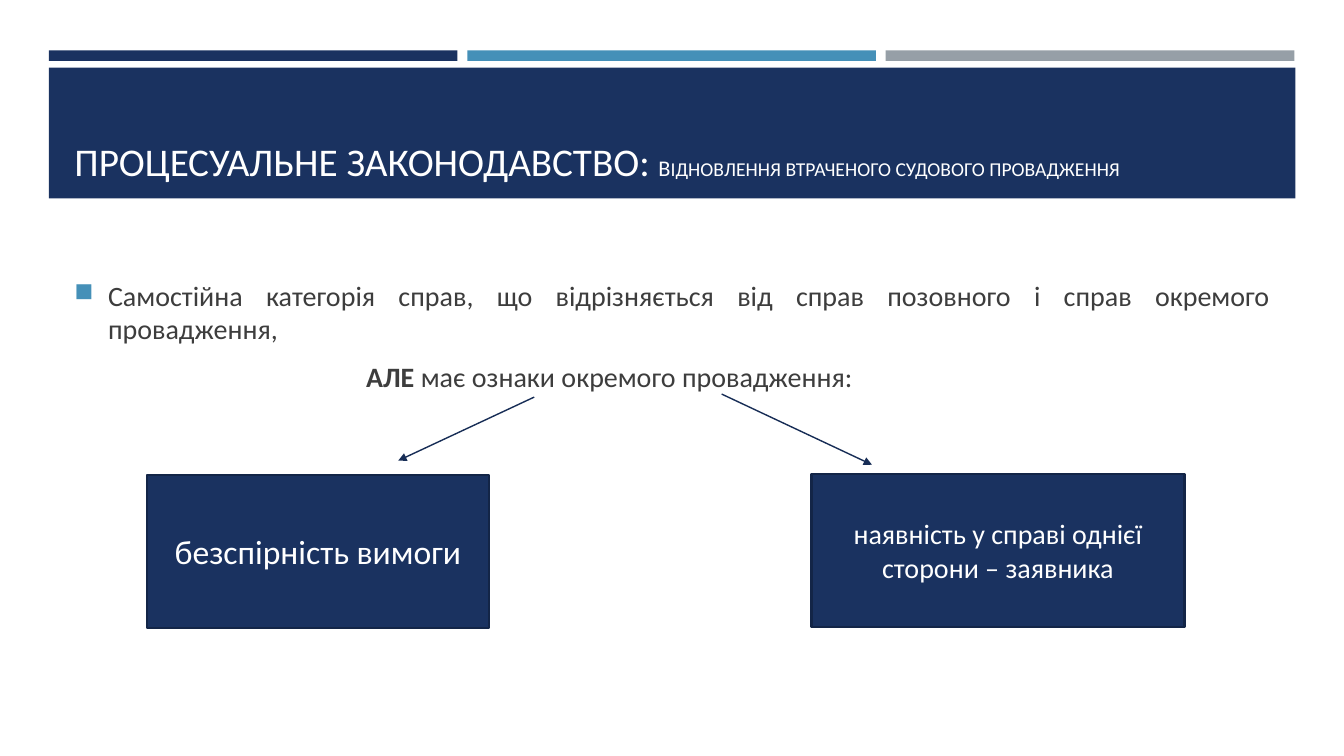
from dataclasses import dataclass

from lxml.etree import SubElement
from pptx import Presentation
from pptx.dml.color import RGBColor
from pptx.enum.shapes import MSO_CONNECTOR as Connector, MSO_SHAPE as Preset
from pptx.enum.text import MSO_ANCHOR as Anchor, PP_ALIGN as Align
from pptx.oxml.ns import qn
from pptx.util import Inches, Pt

WIDTH, HEIGHT = Inches(13.33), Inches(7.5)
NAVY, BLUE, GREY = "1A3260", "4590B8", "969FA7"
EDGE, ARROW, INK, WHITE = "132547", "172D56", "3D3D3D", "FFFFFF"
FONT = "Calibri"


@dataclass(frozen=True)
class Area:
    """A rectangle in percent of the slide's width and height."""
    left: float
    top: float
    width: float
    height: float

    def lengths(self) -> tuple:
        return (*point(self.left, self.top), *point(self.width, self.height))


@dataclass(frozen=True)
class Piece:
    text: str
    size: int
    color: str = WHITE
    bold: bool = False


@dataclass(frozen=True)
class Feature:
    """A boxed feature and the arrow that leads to it."""
    area: Area
    label: Piece
    arrow_start: tuple
    arrow_end: tuple


STRIPES = (NAVY, BLUE, GREY)
STRIPE_LEFT, STRIPE_STEP = 3.64, 31.13
BAND = Area(STRIPE_LEFT, 8.93, 92.74, 17.33)
TITLE = Area(4.8, 10.27, 90.45, 14.8)
BODY = Area(4.8, 36.13, 90.45, 18)

TITLE_PIECES = (
    Piece("ПРОЦЕСУАЛЬНЕ ЗАКОНОДАВСТВО: ", 28),
    Piece("В", 16),
    Piece("ІДНОВЛЕННЯ ВТРАЧЕНОГО СУДОВОГО ПРОВАДЖЕННЯ", 14),
)
CATEGORY = (Piece("Самостійна категорія справ, що відрізняється від справ "
                  "позовного і справ окремого провадження,", 20, INK),)
EXCEPTION = (Piece("АЛЕ ", 20, INK, True),
             Piece("має ознаки окремого провадження:", 20, INK))
FEATURES = (
    Feature(Area(10.95, 62.8, 25.43, 20.27), Piece("безспірність вимоги", 24),
            (39.75, 52.53), (29.63, 60.93)),
    Feature(Area(60.38, 62.67, 27.75, 20.27),
            Piece("наявність у справі однієї сторони – заявника", 20),
            (53.7, 52.13), (64.88, 61.47)),
)


def point(x: float, y: float) -> tuple:
    return round(WIDTH * x / 100), round(HEIGHT * y / 100)


def rgb(value: str) -> RGBColor:
    return RGBColor.from_string(value)


def set_all(target, formats: dict) -> None:
    for name, value in formats.items():
        setattr(target, name, value)


def write(paragraph, pieces: tuple, **formats) -> None:
    set_all(paragraph, formats)
    for piece in pieces:
        run = paragraph.add_run()
        run.text = piece.text
        set_all(run.font, {"name": FONT, "size": Pt(piece.size), "bold": piece.bold})
        run.font.color.rgb = rgb(piece.color)


def add_block(slide, area: Area, fill: str, edge: str = ""):
    block = slide.shapes.add_shape(Preset.RECTANGLE, *area.lengths())
    block.shadow.inherit = False
    block.fill.solid()
    block.fill.fore_color.rgb = rgb(fill)
    if edge:
        block.line.color.rgb = rgb(edge)
        block.line.width = Pt(1.75)
    else:
        block.line.fill.background()
    return block


def add_text_frame(slide, area: Area, anchor: Anchor):
    frame = slide.shapes.add_textbox(*area.lengths()).text_frame
    set_all(frame, {"word_wrap": True, "vertical_anchor": anchor})
    return frame


def add_bullet(paragraph, color: str) -> None:
    properties = paragraph._p.get_or_add_pPr()
    bullet_color = SubElement(properties, qn("a:buClr"))
    SubElement(bullet_color, qn("a:srgbClr"), val=color)
    SubElement(properties, qn("a:buSzPct"), val="92000")
    SubElement(properties, qn("a:buChar"), char="■")


def indent(paragraph, left: float, first: float = 0) -> None:
    """Indent by shares of the slide's width, in percent."""
    properties = paragraph._p.get_or_add_pPr()
    properties.set("marL", str(point(left, 0)[0]))
    properties.set("indent", str(point(first, 0)[0]))


def add_arrow(slide, start: tuple, end: tuple) -> None:
    arrow = slide.shapes.add_connector(Connector.STRAIGHT, *point(*start), *point(*end))
    arrow.line.color.rgb = rgb(ARROW)
    arrow.line.width = Pt(1)
    SubElement(arrow.line._get_or_add_ln(), qn("a:tailEnd"), type="triangle")
    SubElement(arrow._element.spPr, qn("a:effectLst"))


def add_header(slide) -> None:
    for column, color in enumerate(STRIPES):
        left = STRIPE_LEFT + column * STRIPE_STEP
        add_block(slide, Area(left, 6.67, 30.4, 1.4), color)
    add_block(slide, BAND, NAVY)
    title = add_text_frame(slide, TITLE, Anchor.BOTTOM)
    write(title.paragraphs[0], TITLE_PIECES)


def add_body(slide) -> None:
    frame = add_text_frame(slide, BODY, Anchor.TOP)
    category, exception = frame.paragraphs[0], frame.add_paragraph()
    write(category, CATEGORY, alignment=Align.JUSTIFY, space_after=Pt(6))
    indent(category, 2.5, -2.5)
    add_bullet(category, BLUE)
    write(exception, EXCEPTION, alignment=Align.JUSTIFY, space_before=Pt(4))
    indent(exception, 21.7)


def add_feature(slide, feature: Feature) -> None:
    frame = add_block(slide, feature.area, NAVY, EDGE).text_frame
    set_all(frame, {"word_wrap": True, "vertical_anchor": Anchor.MIDDLE})
    write(frame.paragraphs[0], (feature.label,), alignment=Align.CENTER)
    add_arrow(slide, feature.arrow_start, feature.arrow_end)


def main() -> None:
    deck = Presentation()
    set_all(deck, {"slide_width": WIDTH, "slide_height": HEIGHT})
    slide = deck.slides.add_slide(deck.slide_layouts[6])
    add_header(slide)
    add_body(slide)
    for feature in FEATURES:
        add_feature(slide, feature)
    deck.save("out.pptx")


if __name__ == "__main__":
    main()
